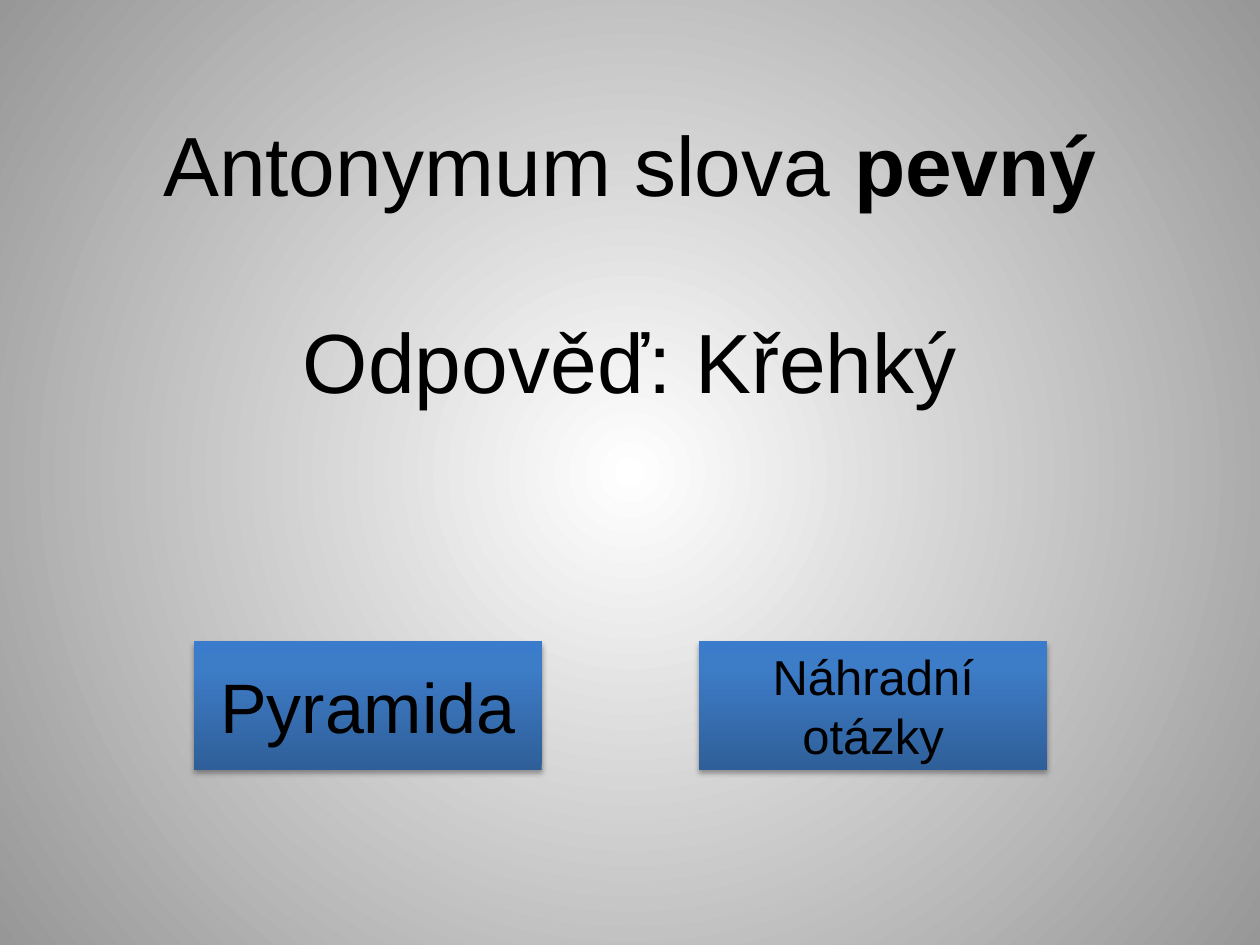
from pptx import Presentation
from pptx.dml.color import RGBColor
from pptx.enum.shapes import MSO_SHAPE
from pptx.enum.text import MSO_ANCHOR, MSO_AUTO_SIZE, PP_ALIGN
from pptx.oxml import parse_xml
from pptx.oxml.ns import nsdecls, qn
from pptx.util import Inches, Pt

COLORS = {"text": "000000", "shadow": "000000",
          "center": "FFFFFF", "edge": "979797",
          "button_low": "2F5F99", "button_mid": "3D7CC7", "button_top": "3A7CCB"}
FONT = "Arial"
LINE_SIZE = 48
RADIAL = ('<a:path path="circle"><a:fillToRect l="50000" t="50000" '
          'r="50000" b="50000"/></a:path>')
UPWARD = '<a:lin ang="16200000" scaled="0"/>'


def set_gradient(fill, parent, stops, direction):
    """Give a shape or background a gradient of (percent, color name) stops."""
    fill.solid()
    stop_xml = "".join(
        f'<a:gs pos="{percent * 1000}"><a:srgbClr val="{COLORS[name]}"/></a:gs>'
        for percent, name in stops)
    gradient = parse_xml(f'<a:gradFill {nsdecls("a")} rotWithShape="1">'
                         f'<a:gsLst>{stop_xml}</a:gsLst>{direction}</a:gradFill>')
    parent.replace(parent.find(qn("a:solidFill")), gradient)


def set_shadow(shape):
    shape.shadow.inherit = False
    effects = shape._element.spPr.find(qn("a:effectLst"))
    effects.append(parse_xml(
        f'<a:outerShdw {nsdecls("a")} blurRad="{Pt(3.1)}" dist="{Pt(1.8)}" '
        f'dir="5400000" rotWithShape="0"><a:srgbClr val="{COLORS["shadow"]}">'
        '<a:alpha val="35000"/></a:srgbClr></a:outerShdw>'))


def add_spans(frame, spans, size):
    """Write (text, bold) spans into one centred paragraph."""
    frame.word_wrap = True
    para = frame.paragraphs[0]
    para.alignment = PP_ALIGN.CENTER
    for text, bold in spans:
        span = para.add_run()
        span.text = text
        span.font.name = FONT
        span.font.size = Pt(size)
        span.font.bold = bold
        span.font.color.rgb = RGBColor.from_string(COLORS["text"])


def fill_line(box, top, spans):
    """Place a full-width line of text."""
    box.left, box.top = Inches(0), Inches(top)
    box.width, box.height = Inches(10), Inches(0.91)
    frame = box.text_frame
    frame.auto_size = MSO_AUTO_SIZE.SHAPE_TO_FIT_TEXT
    frame.vertical_anchor = MSO_ANCHOR.TOP
    add_spans(frame, spans, LINE_SIZE)


def add_button(page, left, label, size):
    button = page.shapes.add_shape(MSO_SHAPE.RECTANGLE, Inches(left), Inches(5.09),
                                   Inches(2.76), Inches(1.02))
    set_gradient(button.fill, button._element.spPr,
                 [(0, "button_low"), (80, "button_mid"), (100, "button_top")], UPWARD)
    button.line.fill.background()
    set_shadow(button)
    button.text_frame.vertical_anchor = MSO_ANCHOR.MIDDLE
    add_spans(button.text_frame, [(label, False)], size)


def main():
    deck = Presentation()
    deck.slide_width, deck.slide_height = Inches(10), Inches(7.5)
    page = deck.slides.add_slide(deck.slide_layouts[5])

    # Background
    fill = page.background.fill
    background = page._element.xpath("./p:cSld/p:bg/p:bgPr")[0]
    set_gradient(fill, background, [(0, "center"), (100, "edge")], RADIAL)

    # Question and answer
    fill_line(page.shapes.title, 0.84, [("Antonymum slova ", False), ("pevný", True)])
    answer = page.shapes.add_textbox(0, 0, 0, 0)
    fill_line(answer, 2.41, [("Odpověď: Křehký", False)])

    # Navigation buttons
    add_button(page, 5.55, "Náhradní otázky", 28)
    add_button(page, 1.54, "Pyramida", 40)

    deck.save("out.pptx")


if __name__ == "__main__":
    main()
